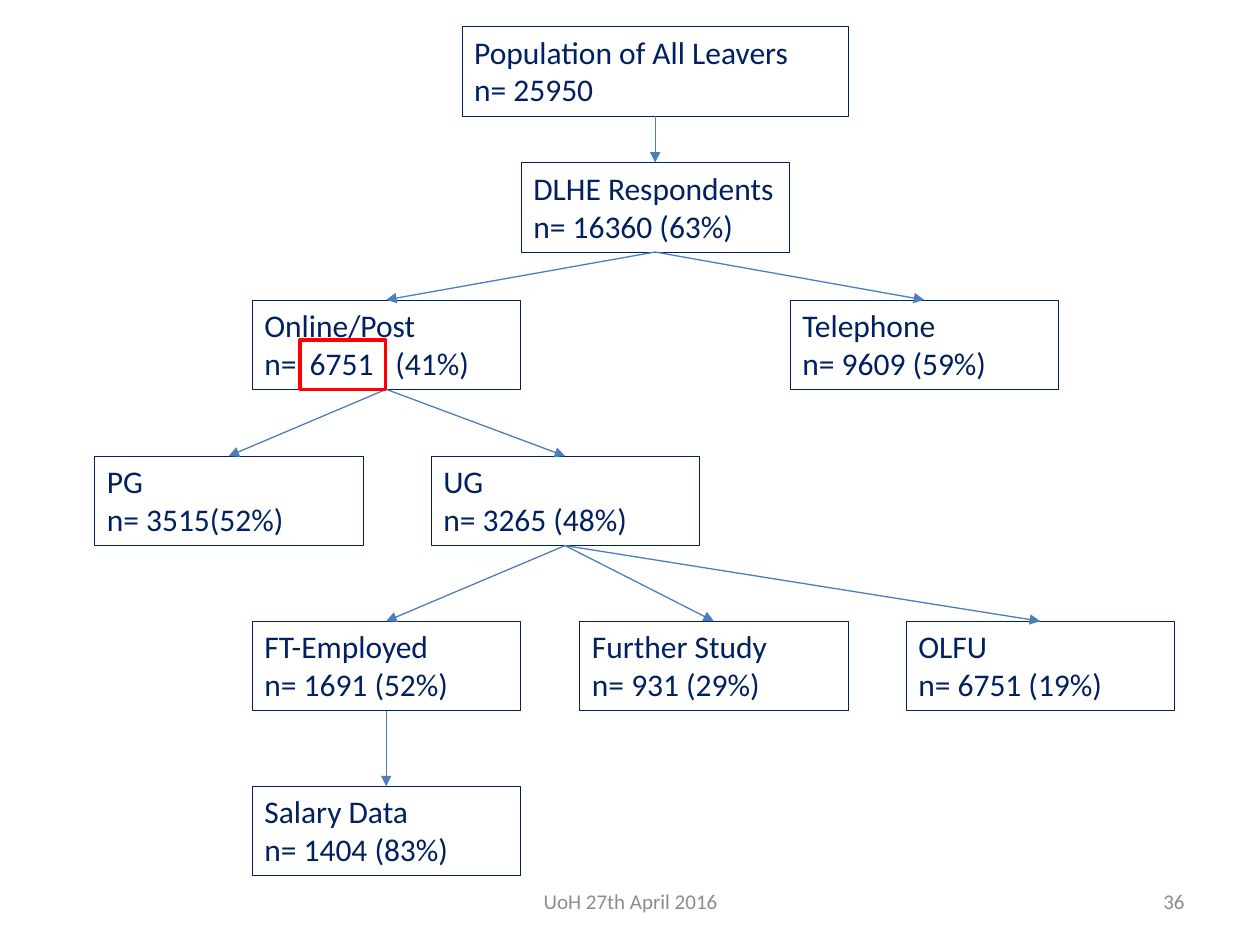
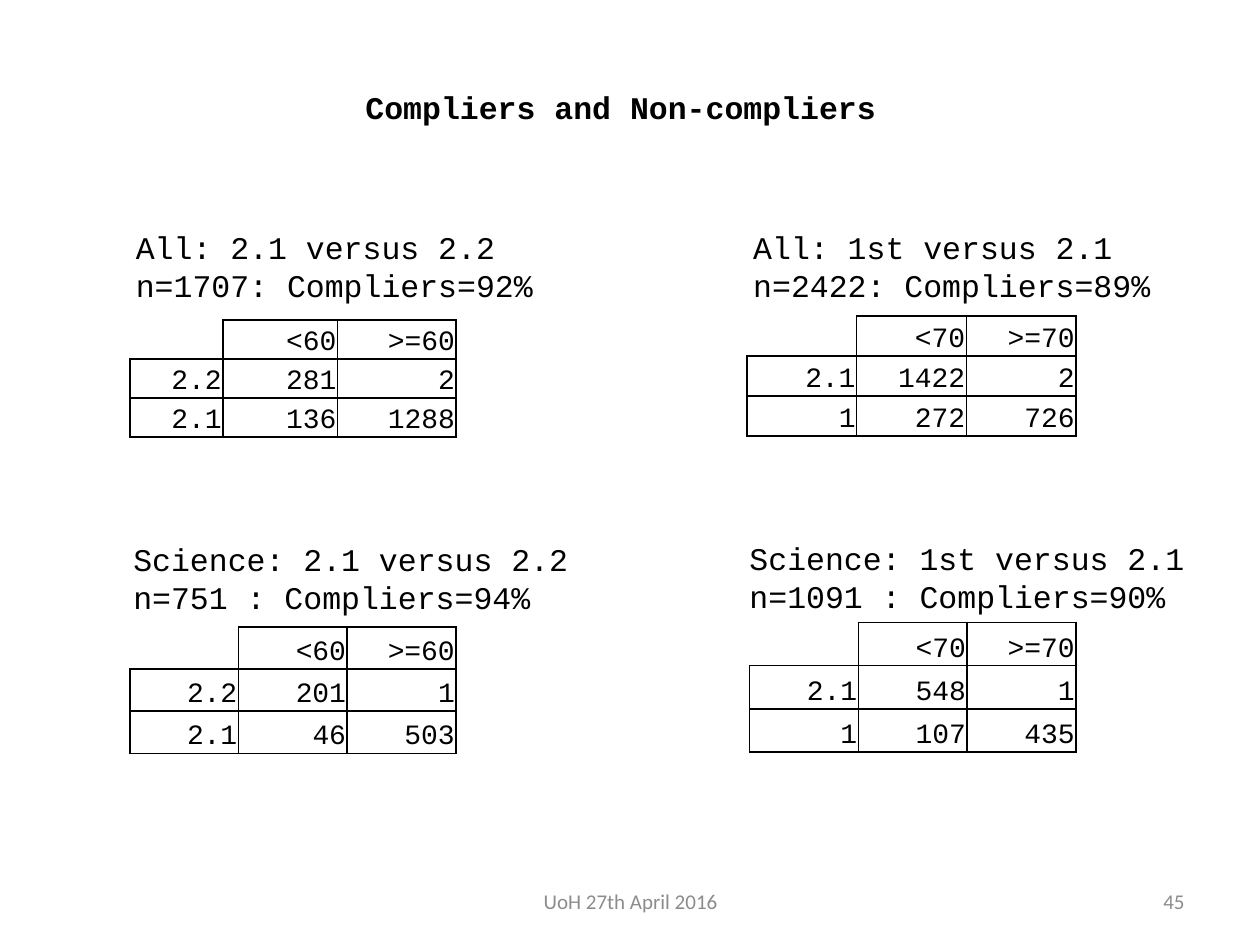
from lxml import etree
from pptx import Presentation
from pptx.dml.color import RGBColor
from pptx.enum.shapes import MSO_CONNECTOR, MSO_SHAPE
from pptx.enum.text import MSO_ANCHOR, PP_ALIGN
from pptx.oxml.ns import qn
from pptx.util import Inches, Pt

RECTANGLE, STRAIGHT = MSO_SHAPE.RECTANGLE, MSO_CONNECTOR.STRAIGHT
TOP, MIDDLE, BOTTOM = MSO_ANCHOR.TOP, MSO_ANCHOR.MIDDLE, MSO_ANCHOR.BOTTOM
LEFT, CENTER, RIGHT = PP_ALIGN.LEFT, PP_ALIGN.CENTER, PP_ALIGN.RIGHT
TITLE_ONLY, BLANK = 5, 6
TOP_SITE, BOTTOM_SITE = 0, 2

COLORS = {"navy": "002060", "arrow": "4B7EBC", "mark": "FF0000",
          "footer": "8C8C8C", "ink": "000000", "paper": "FFFFFF"}
SANS, MONO = "Calibri", "Courier New"

# The slide is a grid of 100 columns by 75 rows
COLUMNS, ROWS = 100, 75
NODE_WIDTH, NODE_HEIGHT = 21.3, 7.1

# Flow chart: name -> centre column, top row, width, lines
NODES = {
    "leavers": (52, 2.1, 30.7, ["Population of All Leavers", "n= 25950"]),
    "respondents": (52, 12.9, NODE_WIDTH, ["DLHE Respondents", "n= 16360 (63%)"]),
    "online": (30.65, 23.8, NODE_WIDTH, ["Online/Post", "n=\t6751\t(41%)"]),
    "telephone": (73.35, 23.8, NODE_WIDTH, ["Telephone", "n= 9609 (59%)"]),
    "postgraduate": (18.15, 36.2, NODE_WIDTH, ["PG", "n= 3515(52%)"]),
    "undergraduate": (44.85, 36.2, NODE_WIDTH, ["UG", "n= 3265 (48%)"]),
    "employed": (30.65, 49.3, NODE_WIDTH, ["FT-Employed", "n= 1691 (52%)"]),
    "study": (56.65, 49.3, NODE_WIDTH, ["Further Study", "n= 931 (29%)"]),
    "olfu": (82.55, 49.3, NODE_WIDTH, ["OLFU", "n= 6751 (19%)"]),
    "salary": (30.65, 62.4, NODE_WIDTH, ["Salary Data", "n= 1404 (83%)"]),
}
BRANCHES = {
    "leavers": ["respondents"],
    "respondents": ["online", "telephone"],
    "online": ["postgraduate", "undergraduate"],
    "undergraduate": ["employed", "study", "olfu"],
    "employed": ["salary"],
}
MARK_BOX = (23.8, 27, 6.8, 3.9)
MARK_TABS = (3.6, 10.4)

# Compliance panels: caption place and lines, table box, column widths, cells
EVEN = [1, 1, 1]
PANELS = [
    ((9.8, 17.6), ["All: 2.1 versus 2.2", "n=1707: Compliers=92%"],
     (10.3, 25.4, 25.9, 9.3), [7.4, 9.1, 9.4],
     [["", "<60", ">=60"], ["2.2", "281", "2"], ["2.1", "136", "1288"]]),
    ((58.8, 17.6), ["All: 1st versus 2.1", "n=2422: Compliers=89%"],
     (59.3, 25.1, 26.1, 9.5), EVEN,
     [["", "<70", ">=70"], ["2.1", "1422", "2"], ["1", "272", "726"]]),
    ((9.6, 42.4), ["Science: 2.1 versus 2.2", "n=751 : Compliers=94%"],
     (10.3, 46.4, 25.9, 13.4), EVEN,
     [["", "", ""], ["", "<60", ">=60"], ["2.2", "201", "1"], ["2.1", "46", "503"]]),
    ((58.5, 42.3), ["Science: 1st versus 2.1", "n=1091 : Compliers=90%"],
     (59.5, 49.4, 25.9, 10.3), EVEN,
     [["", "<70", ">=70"], ["2.1", "548", "1"], ["1", "107", "435"]]),
]


def grid(*lengths):
    """Turn grid steps into slide lengths."""
    return [Inches(length / 10) for length in lengths]


def color(name):
    return RGBColor.from_string(COLORS[name])


def write(frame, lines, font, size, ink, align=LEFT, anchor=TOP, bold=False):
    """Fill a text frame with one paragraph per line."""
    frame.word_wrap = True
    frame.vertical_anchor = anchor
    for index, line in enumerate(lines):
        para = frame.add_paragraph() if index else frame.paragraphs[0]
        para.alignment = align
        span = para.add_run()
        span.text = line
        span.font.name, span.font.size, span.font.bold = font, Pt(size), bold
        span.font.color.rgb = color(ink)


def add_text(page, box, lines, font, size, ink, **style):
    label = page.shapes.add_textbox(*grid(*box))
    write(label.text_frame, lines, font, size, ink, **style)


def add_frame(page, box, ink, width):
    """Draw an unfilled rectangle."""
    frame = page.shapes.add_shape(RECTANGLE, *grid(*box))
    frame.shadow.inherit = False
    frame.fill.background()
    frame.line.color.rgb = color(ink)
    frame.line.width = Pt(width)
    return frame


def add_footer(page, number):
    for box, words, align in [((34.2, 69.5, 31.7, 4), "UoH 27th April 2016", CENTER),
                              ((71.7, 69.5, 23.3, 4), number, RIGHT)]:
        add_text(page, box, [words], SANS, 12, "footer", align=align, anchor=MIDDLE)


def add_node(page, center, top, width, lines):
    box = (center - width / 2, top, width, NODE_HEIGHT)
    node = add_frame(page, box, "navy", 0.25)
    write(node.text_frame, lines, SANS, 18, "navy")
    for para in node.text_frame.paragraphs:
        if "\t" in para.text:
            stops = etree.SubElement(para._p.get_or_add_pPr(), qn("a:tabLst"))
            for place in grid(*MARK_TABS):
                etree.SubElement(stops, qn("a:tab"), pos=str(place), algn="l")
    return node


def add_arrow(page, parent, child):
    arrow = page.shapes.add_connector(STRAIGHT, 0, 0, 0, 0)
    arrow.begin_connect(parent, BOTTOM_SITE)
    arrow.end_connect(child, TOP_SITE)
    arrow.line.color.rgb = color("arrow")
    arrow.line.width = Pt(0.75)
    etree.SubElement(arrow.line._get_or_add_ln(), qn("a:tailEnd"), type="triangle")
    etree.SubElement(arrow._element.spPr, qn("a:effectLst"))


def set_border(cell, edge, ink):
    line = etree.SubElement(cell._tc.get_or_add_tcPr(), qn("a:" + edge), w=str(Pt(1)))
    fill = etree.SubElement(line, qn("a:solidFill"))
    etree.SubElement(fill, qn("a:srgbClr"), val=COLORS[ink])


def add_counts(page, box, shares, values):
    """Add a table whose empty corner has no visible border."""
    table = page.shapes.add_table(len(values), len(shares), *grid(*box)).table
    table.first_row = table.horz_banding = False
    for column, share in zip(table.columns, shares):
        column.width = grid(box[2] * share / sum(shares))[0]
    filled = {(r, c) for r, row in enumerate(values) for c, value in enumerate(row) if value}
    for r, row in enumerate(values):
        for c, value in enumerate(row):
            cell = table.cell(r, c)
            cell.margin_left = cell.margin_right = cell.margin_top = Inches(0.01)
            cell.margin_bottom = 0
            # An edge shows when a cell on either side of it holds a value
            neighbours = {"lnL": (r, c - 1), "lnR": (r, c + 1),
                          "lnT": (r - 1, c), "lnB": (r + 1, c)}
            for edge, neighbour in neighbours.items():
                set_border(cell, edge, "ink" if filled & {(r, c), neighbour} else "paper")
            cell.fill.background()
            cell.vertical_anchor = BOTTOM
            if value:
                write(cell.text_frame, [value], MONO, 16, "ink", align=RIGHT, anchor=BOTTOM)


def build_flow(deck):
    page = deck.slides.add_slide(deck.slide_layouts[BLANK])
    add_footer(page, "36")
    nodes = {name: add_node(page, *node) for name, node in NODES.items()}
    for parent, children in BRANCHES.items():
        for child in children:
            add_arrow(page, nodes[parent], nodes[child])
    add_frame(page, MARK_BOX, "mark", 2)


def build_compliers(deck):
    page = deck.slides.add_slide(deck.slide_layouts[TITLE_ONLY])
    add_footer(page, "45")
    title = page.shapes.title
    title.left, title.top, title.width, title.height = grid(28, 6.5, 49.2, 4)
    write(title.text_frame, ["Compliers and Non-compliers"], MONO, 18, "ink", bold=True)
    for (left, top), caption, box, shares, values in PANELS:
        add_counts(page, box, shares, values)
        add_text(page, (left, top, 41, NODE_HEIGHT), caption, MONO, 18, "ink")


def main():
    deck = Presentation()
    deck.slide_width, deck.slide_height = grid(COLUMNS, ROWS)
    build_flow(deck)
    build_compliers(deck)
    deck.save("out.pptx")


if __name__ == "__main__":
    main()
